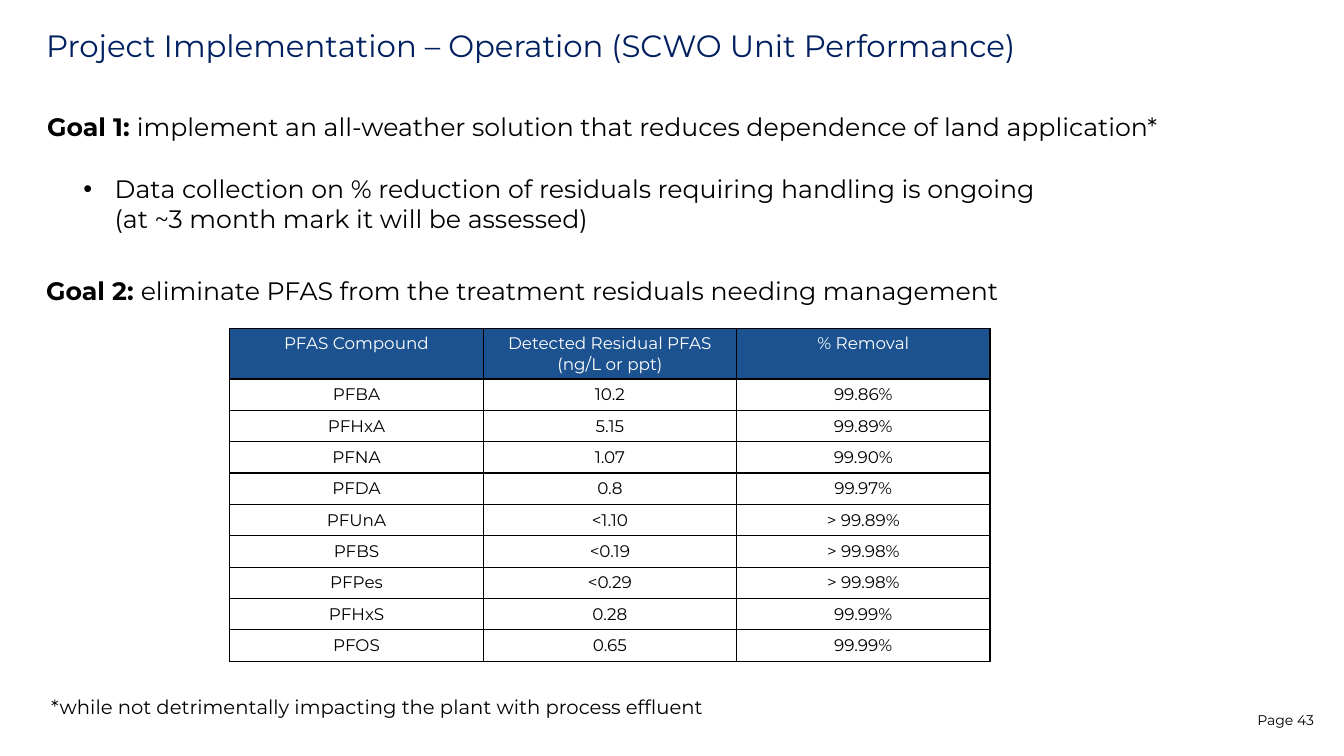
from dataclasses import dataclass

from lxml.etree import SubElement
from pptx import Presentation
from pptx.dml.color import RGBColor
from pptx.enum.text import MSO_ANCHOR, PP_ALIGN
from pptx.oxml.ns import qn
from pptx.util import Inches, Pt

FONT = "Montserrat"
BLACK = RGBColor(0, 0, 0)
WHITE = RGBColor(0xFF, 0xFF, 0xFF)
NAVY = RGBColor(0x00, 0x20, 0x60)
HEADER_BLUE = RGBColor(0x1C, 0x52, 0x90)


@dataclass
class TextItem:
    left: float
    top: float
    width: float
    height: float
    text: str
    size: int = 18
    color: RGBColor = BLACK
    label: str = ""
    align: PP_ALIGN = PP_ALIGN.LEFT
    line_spacing: float = 1.0
    bullet: bool = False


TEXTS = [
    TextItem(0.36, 0.26, 12.47, 0.47,
             "Project Implementation – Operation (SCWO Unit Performance)",
             22, NAVY, line_spacing=0.9),
    TextItem(0.37, 1.06, 11.99, 0.4,
             "implement an all-weather solution that reduces dependence of land application*",
             label="Goal 1: "),
    TextItem(0.73, 1.67, 9.94, 0.71,
             "Data collection on % reduction of residuals requiring handling is ongoing "
             "(at ~3 month mark it will be assessed)", bullet=True),
    TextItem(0.36, 2.68, 11.39, 0.4,
             "eliminate PFAS from the treatment residuals needing management",
             label="Goal 2: "),
    TextItem(0.41, 6.84, 9.69, 0.34,
             "*while not detrimentally impacting the plant with process effluent", 14),
    TextItem(11.57, 7.01, 1.56, 0.4, "Page 43", 10, align=PP_ALIGN.RIGHT),
]

RESULTS = [
    ("PFAS Compound", "Detected Residual PFAS (ng/L or ppt)", "% Removal"),
    ("PFBA", "10.2", "99.86%"),
    ("PFHxA", "5.15", "99.89%"),
    ("PFNA", "1.07", "99.90%"),
    ("PFDA", "0.8", "99.97%"),
    ("PFUnA", "<1.10", "> 99.89%"),
    ("PFBS", "<0.19", "> 99.98%"),
    ("PFPes", "<0.29", "> 99.98%"),
    ("PFHxS", "0.28", "99.99%"),
    ("PFOS", "0.65", "99.99%"),
]


def set_font(para, size: int, color: RGBColor) -> None:
    para.font.name = FONT
    para.font.size = Pt(size)
    para.font.color.rgb = color


def add_bullet(para) -> None:
    props = para._p.get_or_add_pPr()
    props.set("marL", str(Inches(0.31)))
    props.set("indent", str(-Inches(0.31)))
    SubElement(props, qn("a:buFont"), typeface="Arial")
    SubElement(props, qn("a:buChar"), char="•")


def add_text(page, item: TextItem) -> None:
    box = page.shapes.add_textbox(Inches(item.left), Inches(item.top),
                                  Inches(item.width), Inches(item.height))
    box.text_frame.word_wrap = True
    para = box.text_frame.paragraphs[0]
    if item.bullet:
        add_bullet(para)
    if item.label:
        span = para.add_run()
        span.text = item.label
        span.font.bold = True
    para.add_run().text = item.text
    para.alignment = item.align
    para.line_spacing = item.line_spacing
    set_font(para, item.size, item.color)


def add_borders(cell) -> None:
    props = cell._tc.get_or_add_tcPr()
    for position, side in enumerate(("a:lnL", "a:lnR", "a:lnT", "a:lnB")):
        line = SubElement(props, qn(side), w=str(Pt(1)))
        fill = SubElement(line, qn("a:solidFill"))
        SubElement(fill, qn("a:srgbClr"), val=str(BLACK))
        props.insert(position, line)


def fill_cell(cell, text: str, header: bool) -> None:
    if header:
        cell.fill.solid()
        cell.fill.fore_color.rgb = HEADER_BLUE
    else:
        cell.fill.background()
        cell.vertical_anchor = MSO_ANCHOR.MIDDLE
        cell.margin_left = cell.margin_right = 0
        cell.margin_top = cell.margin_bottom = 0
    add_borders(cell)
    cell.text = text
    para = cell.text_frame.paragraphs[0]
    para.alignment = PP_ALIGN.CENTER
    set_font(para, 12, WHITE if header else BLACK)


def add_results(page) -> None:
    frame = page.shapes.add_table(len(RESULTS), len(RESULTS[0]), Inches(2.28),
                                  Inches(3.26), Inches(7.54), Inches(3.3))
    table = frame.table
    table.horz_banding = False
    for row_index, values in enumerate(RESULTS):
        header = row_index == 0
        table.rows[row_index].height = Inches(0.5 if header else 2.8 / 9)
        for column_index, text in enumerate(values):
            fill_cell(table.cell(row_index, column_index), text, header)


def main() -> None:
    deck = Presentation()
    deck.slide_width = Inches(13.33)
    deck.slide_height = Inches(7.5)
    page = deck.slides.add_slide(deck.slide_layouts[6])

    # Title, goals, footnote and page number
    for item in TEXTS:
        add_text(page, item)

    # PFAS removal results
    add_results(page)

    deck.save("out.pptx")


if __name__ == "__main__":
    main()
